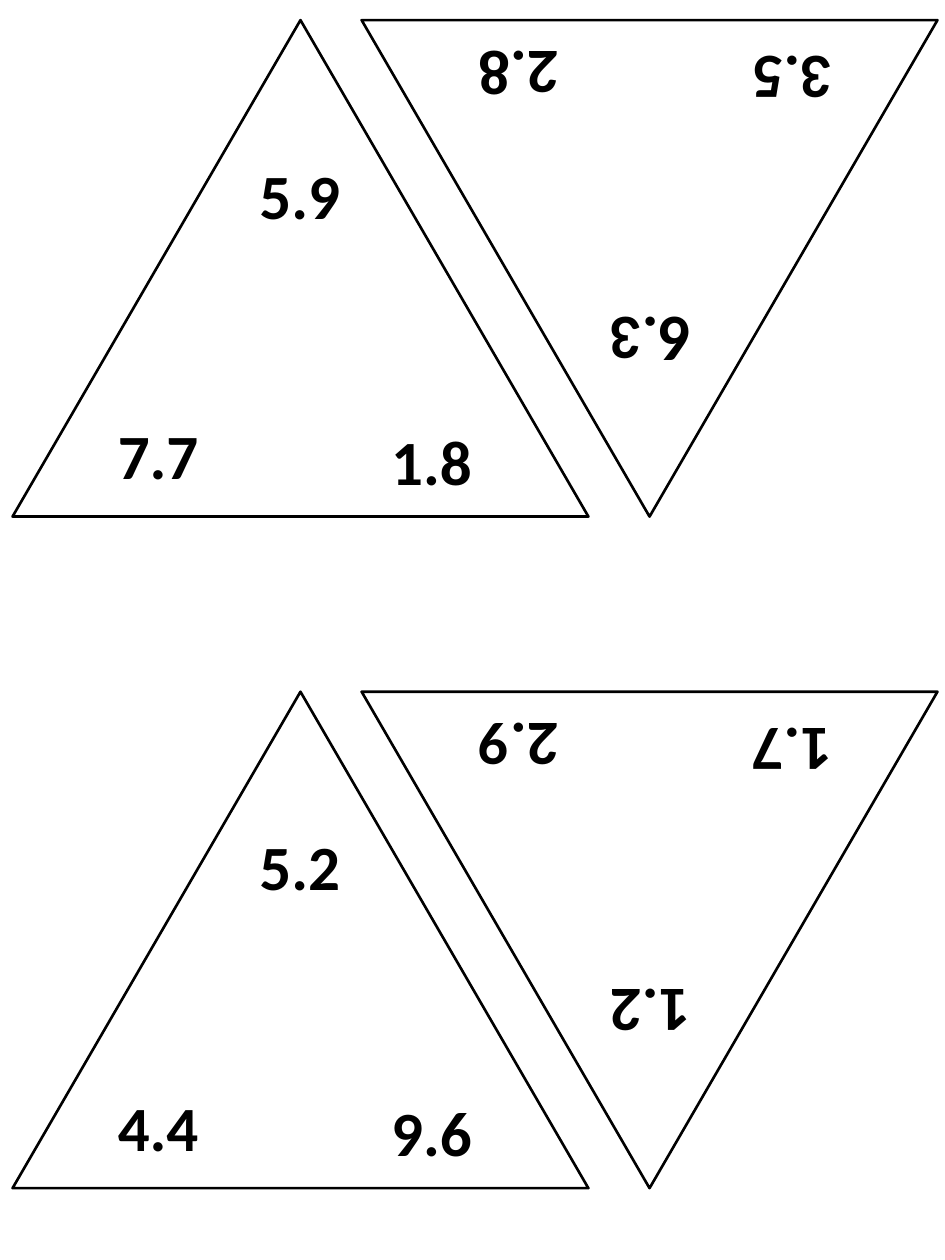
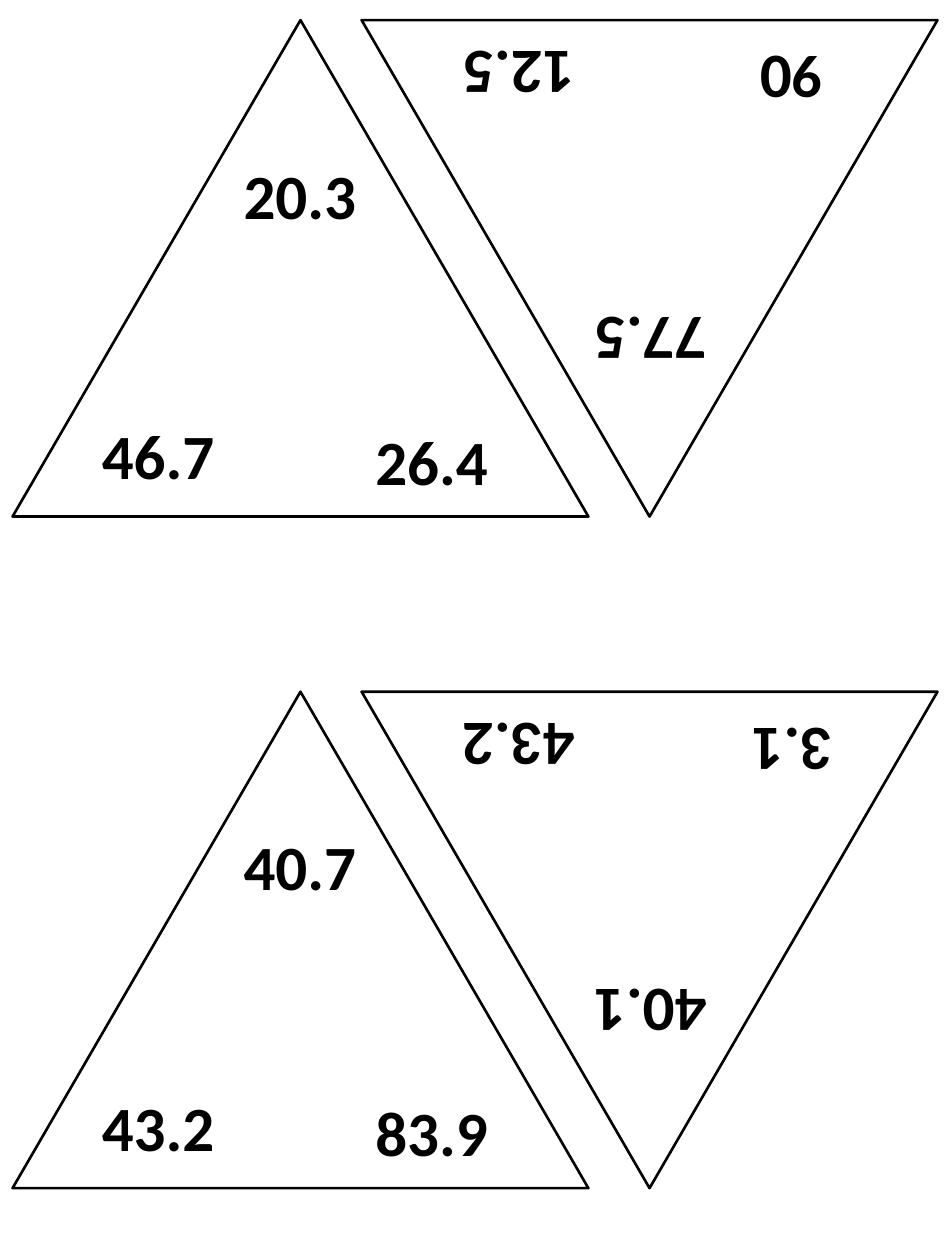
"""Build two sheets of triangular number cards, alternately upright and inverted."""
from dataclasses import dataclass
from typing import NamedTuple

from pptx import Presentation
from pptx import util as u
from pptx.dml import color
from pptx.enum import shapes, text

PX = 9144
COLORS = {"paper": "FFFFFF", "ink": "000000"}
FONT = "Calibri"
SHEET_WIDTH, SHEET_HEIGHT = 750, 1000
CARD_WIDTH, CARD_HEIGHT = 457, 394
FIRST_LEFT, FIRST_TOP = 10, 16
COLUMN_STEP, ROW_STEP = 277, 533


class Corner(NamedTuple):
    left: int
    top: int
    width: int
    height: int = 71


@dataclass(frozen=True)
class Card:
    apex: str
    base_left: str
    base_right: str

    def numbers(self) -> tuple[str, str, str]:
        return self.apex, self.base_left, self.base_right


CORNERS = (Corner(165, 103, 126), Corner(49, 310, 133), Corner(258, 314, 149))

SHEETS = (
    (
        (Card("5.9", "7.7", "1.8"), Card("6.3", "3.5", "2.8")),
        (Card("5.2", "4.4", "9.6"), Card("1.2", "1.7", "2.9")),
    ),
    (
        (Card("20.3", "46.7", "26.4"), Card("77.5", "90", "12.5")),
        (Card("40.7", "43.2", "83.9"), Card("40.1", "3.1", "43.2")),
    ),
)


def px(length: int) -> u.Emu:
    return u.Emu(length * PX)


def rgb(name: str) -> color.RGBColor:
    return color.RGBColor.from_string(COLORS[name])


def draw_outline(card_group, left: int, top: int, angle: int) -> None:
    triangle = card_group.shapes.add_shape(
        shapes.MSO_SHAPE.ISOSCELES_TRIANGLE,
        px(left), px(top), px(CARD_WIDTH), px(CARD_HEIGHT),
    )
    triangle.rotation = angle
    triangle.shadow.inherit = False
    triangle.fill.solid()
    triangle.fill.fore_color.rgb = rgb("paper")
    triangle.line.color.rgb = rgb("ink")
    triangle.line.width = u.Pt(1.5)


def draw_number(card_group, number: str, left: int, top: int, corner: Corner, angle: int) -> None:
    label = card_group.shapes.add_textbox(
        px(left), px(top), px(corner.width), px(corner.height)
    )
    label.rotation = angle
    frame = label.text_frame
    frame.word_wrap = True
    frame.auto_size = text.MSO_AUTO_SIZE.SHAPE_TO_FIT_TEXT
    frame.text = number
    paragraph = frame.paragraphs[0]
    paragraph.alignment = text.PP_ALIGN.CENTER
    font = paragraph.runs[0].font
    font.name = FONT
    font.size = u.Pt(36)
    font.bold = True
    font.color.rgb = rgb("ink")


def draw_card(slide, card: Card, left: int, top: int, inverted: bool) -> None:
    card_group = slide.shapes.add_group_shape()
    angle = 180 if inverted else 0
    draw_outline(card_group, left, top, angle)
    for number, corner in zip(card.numbers(), CORNERS):
        inset_x, inset_y = corner.left, corner.top
        if inverted:
            inset_x = CARD_WIDTH - corner.left - corner.width
            inset_y = CARD_HEIGHT - corner.top - corner.height
        draw_number(card_group, number, left + inset_x, top + inset_y, corner, angle)


def main() -> None:
    deck = Presentation()
    deck.slide_width, deck.slide_height = px(SHEET_WIDTH), px(SHEET_HEIGHT)
    for sheet in SHEETS:
        slide = deck.slides.add_slide(deck.slide_layouts[6])
        for row, cards in enumerate(sheet):
            for column, card in enumerate(cards):
                left = FIRST_LEFT + column * COLUMN_STEP
                top = FIRST_TOP + row * ROW_STEP
                draw_card(slide, card, left, top, inverted=column == 1)
    deck.save("out.pptx")


if __name__ == "__main__":
    main()
